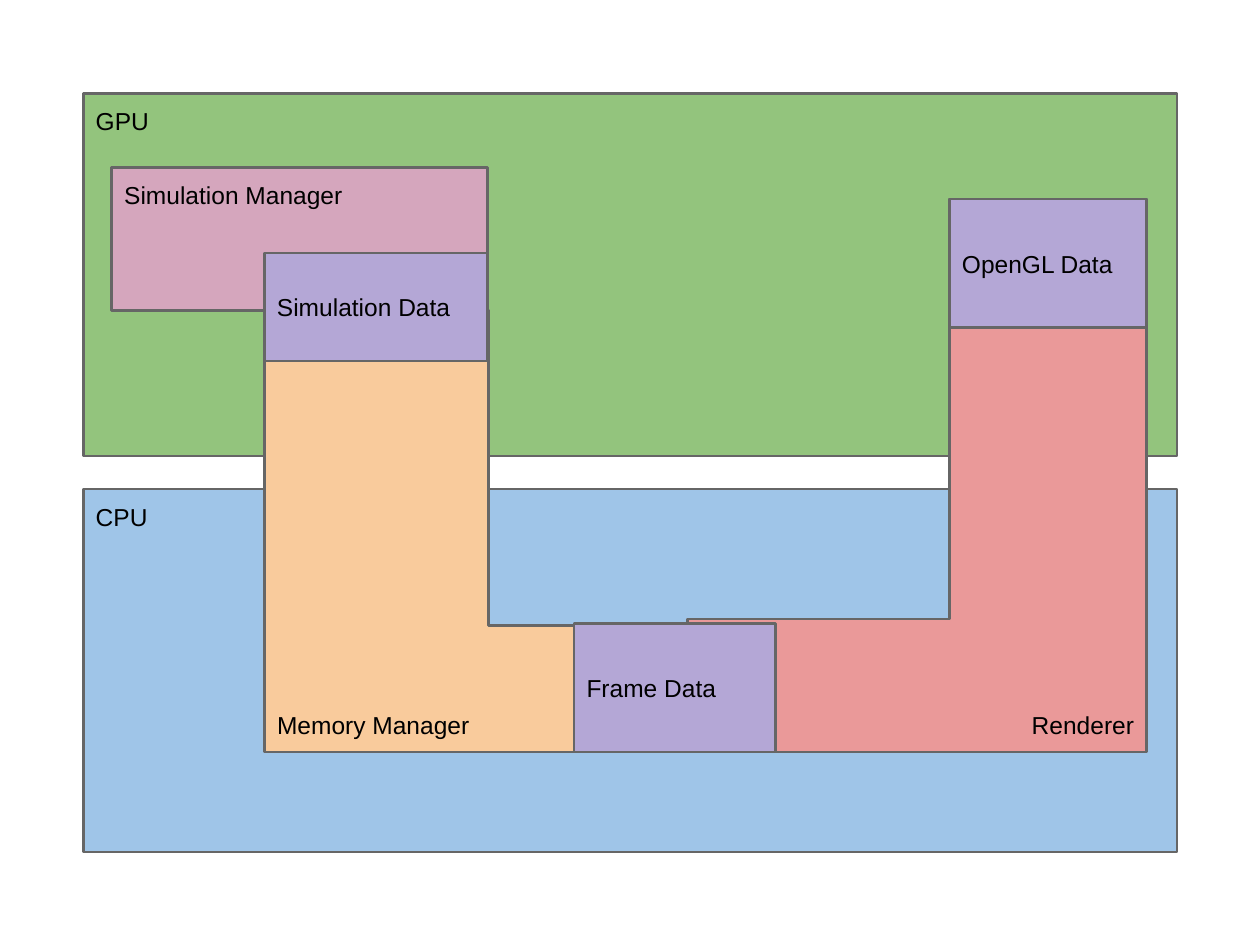
from lxml.etree import SubElement
from pptx import Presentation
from pptx.dml.color import RGBColor
from pptx.enum.shapes import MSO_SHAPE as SHAPE
from pptx.enum.text import MSO_ANCHOR as ANCHOR, PP_ALIGN as ALIGN
from pptx.oxml.ns import qn
from pptx.util import Pt

BLUE, GREEN, PINK = "9FC5E8", "93C47D", "D5A6BD"
RED, ORANGE, PURPLE = "EA9999", "F9CB9C", "B4A7D6"
OUTLINE, INK = "666666", "000000"
INSET = 7.2

# label, (left, top, width, height), fill, anchor; back to front
BLOCKS = [
    ("CPU", (47.6, 279.4, 625, 207.4), BLUE, ANCHOR.TOP),
    ("GPU", (47.6, 53.3, 625, 207.4), GREEN, ANCHOR.TOP),
    ("Simulation Manager", (63.9, 95.9, 214.8, 81.4), PINK, ANCHOR.TOP),
    ("Renderer", (392.9, 113.8, 262.3, 316), RED, ANCHOR.BOTTOM),
    ("Memory Manager", (151.2, 177.2, 241.7, 252.6), ORANGE, ANCHOR.BOTTOM),
    ("Simulation Data", (151.2, 144.6, 127.5, 61.8), PURPLE, ANCHOR.MIDDLE),
    ("OpenGL Data", (542.6, 113.8, 112.6, 73.4), PURPLE, ANCHOR.MIDDLE),
    ("Frame Data", (328.1, 356.4, 115.2, 73.4), PURPLE, ANCHOR.MIDDLE),
]
# thickness of the foot and of the upright, as shares of the shorter side
CORNERS = {"Renderer": (0.29, 0.43), "Memory Manager": (0.3, 0.53)}
MIRRORED = {"Renderer"}


def color(value):
    return RGBColor.from_string(value)


def add_block(slide, label, box, fill, anchor):
    kind = SHAPE.CORNER if label in CORNERS else SHAPE.RECTANGLE
    block = slide.shapes.add_shape(kind, *map(Pt, box))
    for index, share in enumerate(CORNERS.get(label, ())):
        block.adjustments[index] = share
    block.shadow.inherit = False
    block.fill.solid()
    block.fill.fore_color.rgb = color(fill)
    block.line.color.rgb = color(OUTLINE)
    block.line.width = Pt(1.5)
    SubElement(block.element.spPr.find(qn("a:ln")), qn("a:round"))

    frame = block.text_frame
    frame.word_wrap = True
    frame.vertical_anchor = anchor
    frame.margin_left = frame.margin_right = Pt(INSET)
    frame.margin_top = frame.margin_bottom = Pt(INSET)
    paragraph = frame.paragraphs[0]
    paragraph.alignment = ALIGN.LEFT
    run = paragraph.add_run()
    run.text = label
    run.font.name = "Arial"
    run.font.size = Pt(14)
    run.font.color.rgb = color(INK)

    if label in MIRRORED:
        block.element.spPr.find(qn("a:xfrm")).set("flipH", "1")
        paragraph.alignment = ALIGN.RIGHT


def main():
    deck = Presentation()
    deck.slide_width, deck.slide_height = Pt(720), Pt(540)
    slide = deck.slides.add_slide(deck.slide_layouts[6])
    for block in BLOCKS:
        add_block(slide, *block)
    deck.save("out.pptx")


if __name__ == "__main__":
    main()
